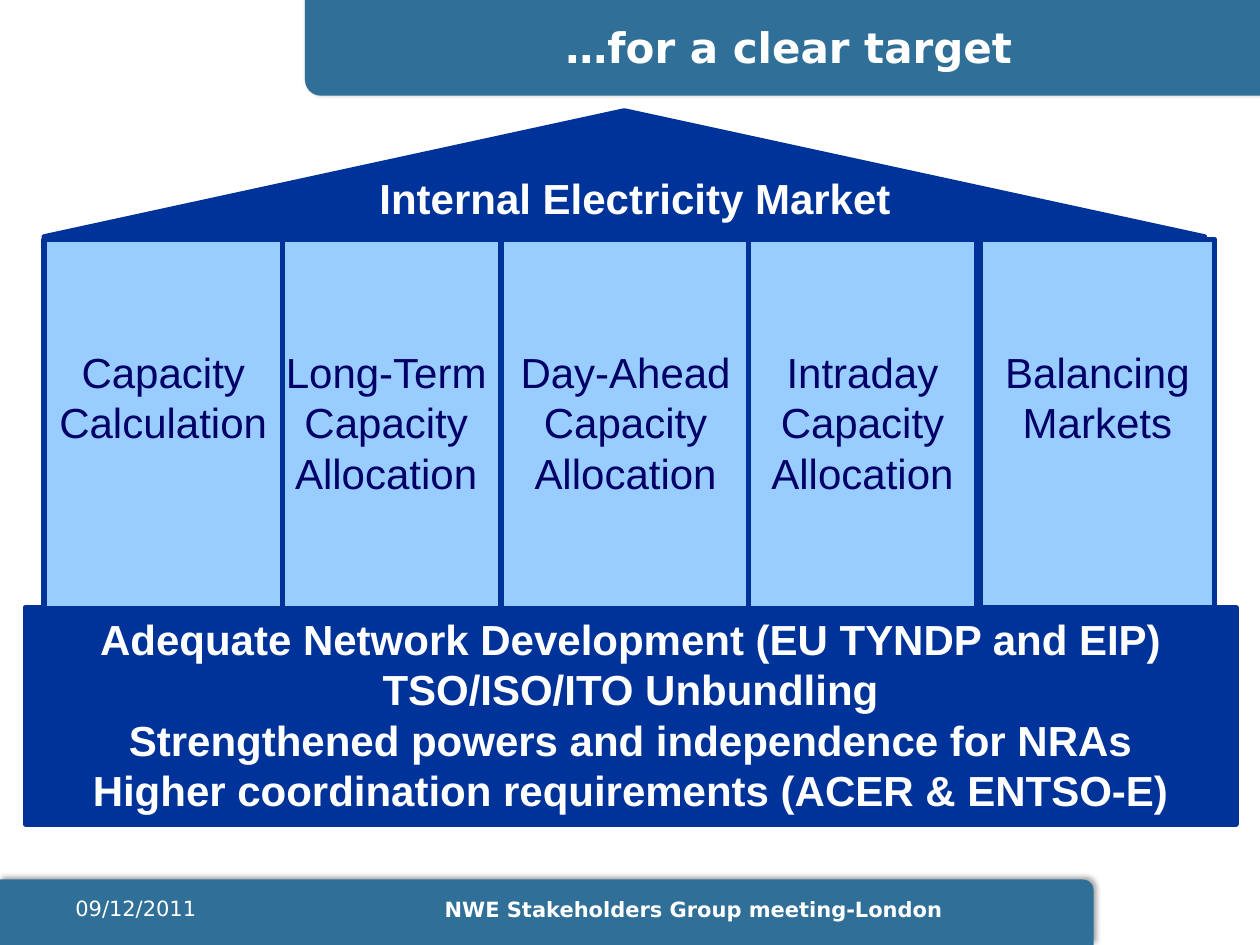
from lxml import etree
from pptx import Presentation
from pptx.dml.color import RGBColor
from pptx.enum.shapes import MSO_SHAPE
from pptx.enum.text import MSO_ANCHOR, PP_ALIGN
from pptx.oxml.ns import qn
from pptx.util import Inches, Pt

# The slide is a grid of 1000 columns by 750 rows
CELL = Inches(0.01)
COLS, ROWS = 1000, 750
TEAL, NAVY, SKY, INK, WHITE = "307098", "003399", "99CCFF", "000066", "FFFFFF"
HOUSE_FONT, BAND_FONT = "Arial", "DejaVu Sans"
LINE_PITCH = 40  # rows taken by one line of house text

# Left column and width inside the house, and the label, in drawing order
LAST_PILLAR = (758, 186, "Balancing Markets")
PILLARS = [
    (196, 181, "Long-Term Capacity Allocation"),
    (378, 197, "Day-Ahead Capacity Allocation"),
    (15, 189, "Capacity Calculation"),
    (574, 181, "Intraday Capacity Allocation"),
]
FOUNDATION = [
    "Adequate Network Development (EU TYNDP and EIP)",
    "TSO/ISO/ITO Unbundling",
    "Strengthened powers and independence for NRAs",
    "Higher coordination requirements (ACER & ENTSO-E)",
]


def rgb(value):
    return RGBColor.from_string(value)


def cells(*box):
    return [round(n * CELL) for n in box]


def add_block(s, kind, box, fill, line=None):
    sp = s.shapes.add_shape(kind, *cells(*box))
    sp.shadow.inherit = False
    sp.fill.solid()
    sp.fill.fore_color.rgb = rgb(fill)
    if line:
        sp.line.color.rgb = rgb(line)
        sp.line.width = Pt(3)
    else:
        sp.line.fill.background()
    return sp


def write(sp, lines, color, font, size=24, bold=False, align=PP_ALIGN.CENTER,
          anchor=MSO_ANCHOR.TOP, pitch=None):
    tf = sp.text_frame
    tf.word_wrap = True
    tf.vertical_anchor = anchor
    for i, line in enumerate(lines):
        p = tf.add_paragraph() if i else tf.paragraphs[0]
        p.alignment = align
        if pitch:
            p.line_spacing = Pt(pitch * 0.72)
        r = p.add_run()
        r.text = line
        for name, value in dict(name=font, size=Pt(size), bold=bold).items():
            setattr(r.font, name, value)
        r.font.color.rgb = rgb(color)


def add_text(s, box, text, **style):
    write(s.shapes.add_textbox(*cells(*box)), [text], WHITE, **style)


def add_band(s, box, rotation=0):
    """Teal band with one rounded corner and a soft shadow."""
    sp = add_block(s, MSO_SHAPE.ROUND_1_RECTANGLE, box, TEAL)
    sp.rotation = rotation
    effects = sp._element.spPr.find(qn("a:effectLst"))
    shadow = etree.SubElement(effects, qn("a:outerShdw"), blurRad=str(Pt(3.1)),
                              dist=str(Pt(1.8)), dir=str(306 * 60000),
                              algn="tl", rotWithShape="0")
    color = etree.SubElement(shadow, qn("a:srgbClr"), val="000000")
    etree.SubElement(color, qn("a:alpha"), val="35000")


def add_header(s, x, y, w, h):
    add_band(s, (x, y, w, h), rotation=180)
    add_text(s, (x + 45, y - 5, w - 80, h + 8), "…for a clear target",
             font=BAND_FONT, bold=True, anchor=MSO_ANCHOR.MIDDLE)


def add_footer(s, x, y, w, h):
    add_band(s, (x, y, w, h))
    style = dict(font=BAND_FONT, size=12, align=PP_ALIGN.LEFT)
    add_text(s, (x + 50, y + 8, 233, 40), "09/12/2011", **style)
    add_text(s, (x + 343, y + 9, 458, 40),
             "NWE Stakeholders Group meeting-London", bold=True, **style)


def add_pillar(s, x, y, w, h, label):
    sp = add_block(s, MSO_SHAPE.RECTANGLE, (x, y, w, h), SKY, NAVY)
    # Labels start two lines down
    sp.text_frame.margin_top = (5 + 2 * LINE_PITCH) * CELL
    write(sp, [label], INK, HOUSE_FONT, pitch=LINE_PITCH)


def add_house(s, x, y, w, h):
    roof_h, base_h = 100, 172
    pillar_y, base_y = y + roof_h + 2, y + h - base_h
    pillar_h = base_y - pillar_y + 1

    def pillar(left, width, label):
        add_pillar(s, x + left, pillar_y, width, pillar_h, label)

    pillar(*LAST_PILLAR)

    # Roof
    add_block(s, MSO_SHAPE.ISOSCELES_TRIANGLE, (x + 15, y, w - 40, roof_h), NAVY, NAVY)
    add_text(s, (x + 220, y + 44, 528, 51), "Internal Electricity Market",
             font=HOUSE_FONT, bold=True, pitch=LINE_PITCH)

    # Foundation
    base = add_block(s, MSO_SHAPE.RECTANGLE, (x, base_y, w, base_h), NAVY, NAVY)
    write(base, FOUNDATION, WHITE, HOUSE_FONT, bold=True, pitch=LINE_PITCH)

    for item in PILLARS:
        pillar(*item)


def main():
    prs = Presentation()
    prs.slide_width, prs.slide_height = cells(COLS, ROWS)
    s = prs.slides.add_slide(prs.slide_layouts[6])
    add_footer(s, 0, ROWS - 52, 868, 52)
    add_header(s, COLS - 758, 0, 758, 76)
    add_house(s, 20, 88, 961, 566)
    prs.save("out.pptx")


if __name__ == "__main__":
    main()
